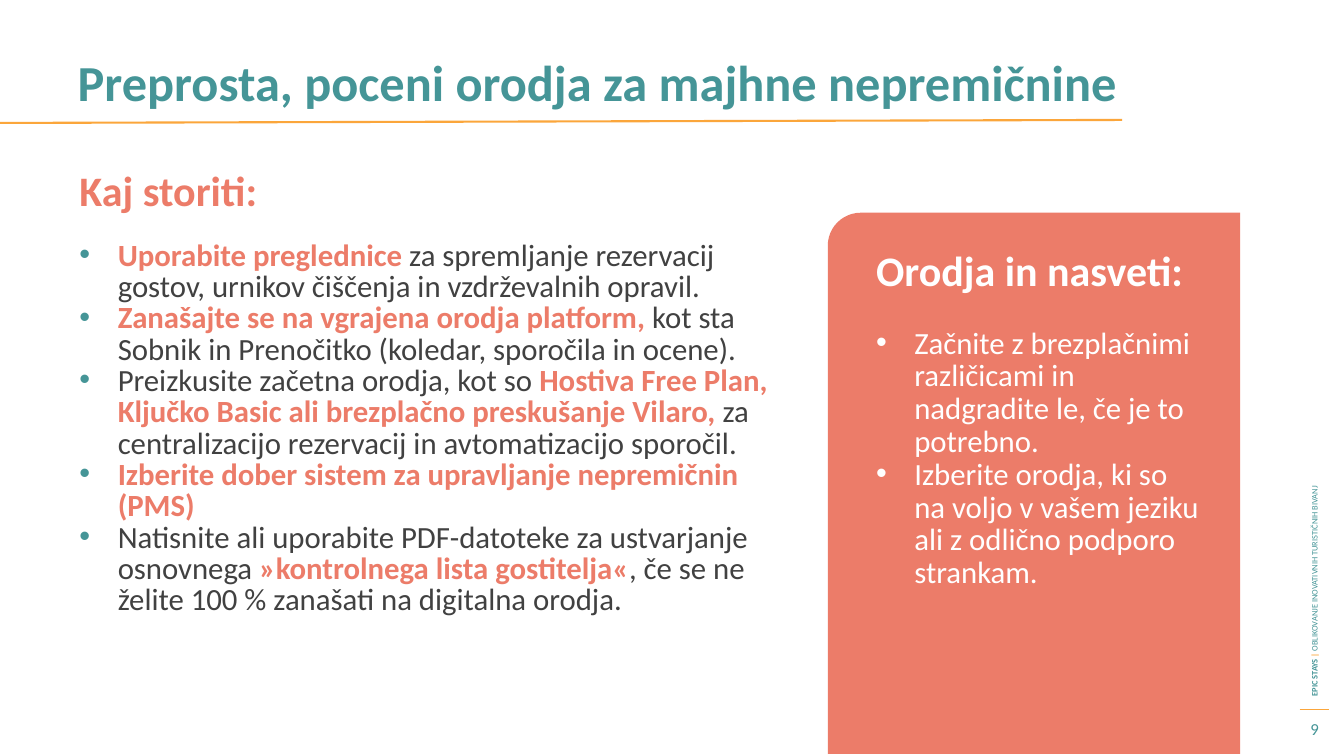
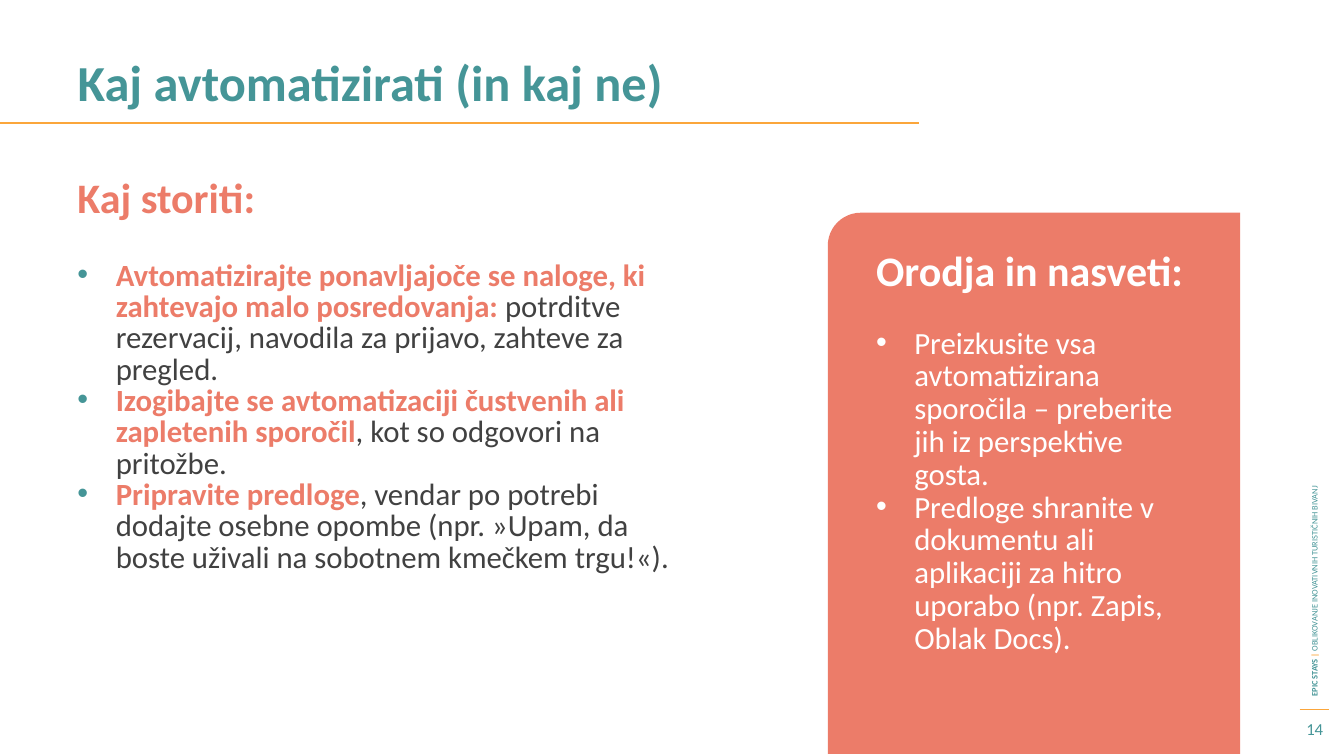
from lxml.etree import SubElement
from pptx import Presentation
from pptx.dml.color import RGBColor
from pptx.enum.shapes import MSO_CONNECTOR, MSO_SHAPE
from pptx.enum.text import MSO_ANCHOR, PP_ALIGN
from pptx.oxml.ns import qn
from pptx.util import Inches, Pt

TEAL = RGBColor(0x45, 0x95, 0x97)
CORAL = RGBColor(0xEC, 0x7C, 0x69)
ORANGE = RGBColor(0xFB, 0xA6, 0x3B)
DARK = RGBColor(0x41, 0x41, 0x41)
WHITE = RGBColor(0xFF, 0xFF, 0xFF)
FONT = "Calibri"
BULLET_INDENT = Inches(0.38)

SLIDES = [
    {
        "title": "Preprosta, poceni orodja za majhne nepremičnine",
        "number": "9",
        "rule_end": (11.13, 1.19),
        "heading_box": (0.69, 1.68, 6.14, 0.88),
        "actions_box": (0.69, 2.34, 7.27, 4),
        "actions": [
            [("Uporabite preglednice ", True),
             ("za spremljanje rezervacij gostov, urnikov čiščenja in vzdrževalnih opravil.", False)],
            [("Zanašajte se na vgrajena orodja platform, ", True),
             ("kot sta Sobnik in Prenočitko (koledar, sporočila in ocene).", False)],
            [("Preizkusite začetna orodja, kot so ", False),
             ("Hostiva Free Plan, Ključko Basic ali brezplačno preskušanje Vilaro, ", True),
             ("za centralizacijo rezervacij in avtomatizacijo sporočil.", False)],
            [("Izberite dober sistem za upravljanje nepremičnin (PMS)", True)],
            [("Natisnite ali uporabite PDF-datoteke za ustvarjanje osnovnega ", False),
             ("»kontrolnega lista gostitelja«", True),
             (", če se ne želite 100 % zanašati na digitalna orodja.", False)],
        ],
        "tips": [
            "Začnite z brezplačnimi različicami in nadgradite le, če je to potrebno.",
            "Izberite orodja, ki so na voljo v vašem jeziku ali z odlično podporo strankam.",
        ],
    },
    {
        "title": "Kaj avtomatizirati (in kaj ne)",
        "number": "14",
        "rule_end": (9.11, 1.22),
        "heading_box": (0.67, 1.75, 6.14, 0.88),
        "actions_box": (0.67, 2.54, 6.14, 4),
        "actions": [
            [("Avtomatizirajte ponavljajoče se naloge, ki zahtevajo malo posredovanja: ", True),
             ("potrditve rezervacij, navodila za prijavo, zahteve za pregled.", False)],
            [("Izogibajte se avtomatizaciji čustvenih ali zapletenih sporočil", True),
             (", kot so odgovori na pritožbe.", False)],
            [("Pripravite predloge", True),
             (", vendar po potrebi dodajte osebne opombe "
              "(npr. »Upam, da boste uživali na sobotnem kmečkem trgu!«).", False)],
        ],
        "tips": [
            "Preizkusite vsa avtomatizirana sporočila – preberite jih iz perspektive gosta.",
            "Predloge shranite v dokumentu ali aplikaciji za hitro uporabo (npr. Zapis, Oblak Docs).",
        ],
    },
]


def add_text_frame(slide, box):
    """Add a wrapping text box and return its frame."""
    frame = slide.shapes.add_textbox(*map(Inches, box)).text_frame
    frame.word_wrap = True
    return frame


def write(paragraph, parts, size, spacing=None):
    """Fill a paragraph with (text, colour, bold) parts."""
    if spacing:
        paragraph.line_spacing = Pt(spacing)
    for text, color, bold in parts:
        run = paragraph.add_run()
        run.text = text
        run.font.name = FONT
        run.font.size = Pt(size)
        run.font.bold = bold
        run.font.color.rgb = color


def add_bullet(paragraph, color):
    """Give a paragraph a hanging bullet."""
    properties = paragraph._p.get_or_add_pPr()
    properties.set("marL", str(BULLET_INDENT))
    properties.set("indent", str(-BULLET_INDENT))
    bullet_color = SubElement(properties, qn("a:buClr"))
    SubElement(bullet_color, qn("a:srgbClr"), val=str(color))
    SubElement(properties, qn("a:buFont"), typeface="Arial")
    SubElement(properties, qn("a:buChar"), char="•")


def add_rule(slide, start, end, width):
    """Draw a plain orange line."""
    rule = slide.shapes.add_connector(
        MSO_CONNECTOR.STRAIGHT, *map(Inches, (*start, *end)))
    rule.line.color.rgb = ORANGE
    rule.line.width = Pt(width)
    SubElement(rule._element.spPr, qn("a:effectLst"))


def add_title(slide, title, rule_end):
    """Place the title and the rule under it."""
    heading = slide.shapes.title
    heading.left, heading.top, heading.width, heading.height = map(
        Inches, (0.67, 0.54, 12, 0.88))
    frame = heading.text_frame
    frame.vertical_anchor = MSO_ANCHOR.TOP
    frame.paragraphs[0].alignment = PP_ALIGN.LEFT
    write(frame.paragraphs[0], [(title, TEAL, True)], 36, 37.2)
    add_rule(slide, (0, 1.22), rule_end, 1.5)


def add_side_footer(slide, number):
    """Place the vertical project line and the page number."""
    add_rule(slide, (12.89, 7.04), (13.18, 7.04), 0.75)
    project = add_text_frame(slide, (10.15, 4.02, 5.77, 0.2))
    project.vertical_anchor = MSO_ANCHOR.MIDDLE
    write(project.paragraphs[0], [
        ("EPIC STAYS ", TEAL, True),
        ("| ", ORANGE, True),
        ("OBLIKOVANJE INOVATIVNIH TURISTIČNIH BIVANJ", TEAL, False),
    ], 6)
    slide.shapes[-1].rotation = 270
    page = add_text_frame(slide, (12.78, 7.06, 0.52, 0.34))
    page.vertical_anchor = MSO_ANCHOR.MIDDLE
    page.paragraphs[0].alignment = PP_ALIGN.CENTER
    write(page.paragraphs[0], [(number, TEAL, False)], 12)


def add_actions(slide, heading_box, actions_box, actions):
    """Place the heading and the list of actions."""
    heading = add_text_frame(slide, heading_box)
    write(heading.paragraphs[0], [("Kaj storiti:", CORAL, True)], 30, 29)
    frame = add_text_frame(slide, actions_box)
    for index, action in enumerate(actions):
        paragraph = frame.add_paragraph() if index else frame.paragraphs[0]
        add_bullet(paragraph, TEAL)
        parts = [(text, CORAL if key else DARK, key) for text, key in action]
        write(paragraph, parts, 22, 22.4)


def add_tips_panel(slide, box, tips):
    """Place the coral panel with one round corner and its tips."""
    left, top, width, height = box
    shift = (height - width) / 2
    panel = slide.shapes.add_shape(
        MSO_SHAPE.ROUND_1_RECTANGLE,
        *map(Inches, (left - shift, top + shift, height, width)))
    panel.rotation = 270
    panel.adjustments[0] = 0.08
    panel.shadow.inherit = False
    panel.fill.solid()
    panel.fill.fore_color.rgb = CORAL
    panel.line.fill.background()

    frame = add_text_frame(slide, (left + 0.38, top + 0.44, width - 0.64, 3.59))
    write(frame.paragraphs[0], [("Orodja in nasveti:", WHITE, True)], 30, 23.4)
    for index, tip in enumerate(tips):
        paragraph = frame.add_paragraph()
        add_bullet(paragraph, WHITE)
        if index == 0:
            paragraph.space_before = Pt(23.4)
        write(paragraph, [(tip, WHITE, False)], 22, 23.4)


def add_advice_slide(deck, content):
    """Build one slide of actions and tips."""
    slide = deck.slides.add_slide(deck.slide_layouts[5])
    add_side_footer(slide, content["number"])
    add_title(slide, content["title"], content["rule_end"])
    add_actions(slide, content["heading_box"], content["actions_box"], content["actions"])
    add_tips_panel(slide, (8.21, 2.11, 4.09, 5.37), content["tips"])


def main():
    """Build and save the deck."""
    deck = Presentation()
    deck.slide_width = Inches(13.33)
    deck.slide_height = Inches(7.5)
    for content in SLIDES:
        add_advice_slide(deck, content)
    deck.save("out.pptx")


if __name__ == "__main__":
    main()
